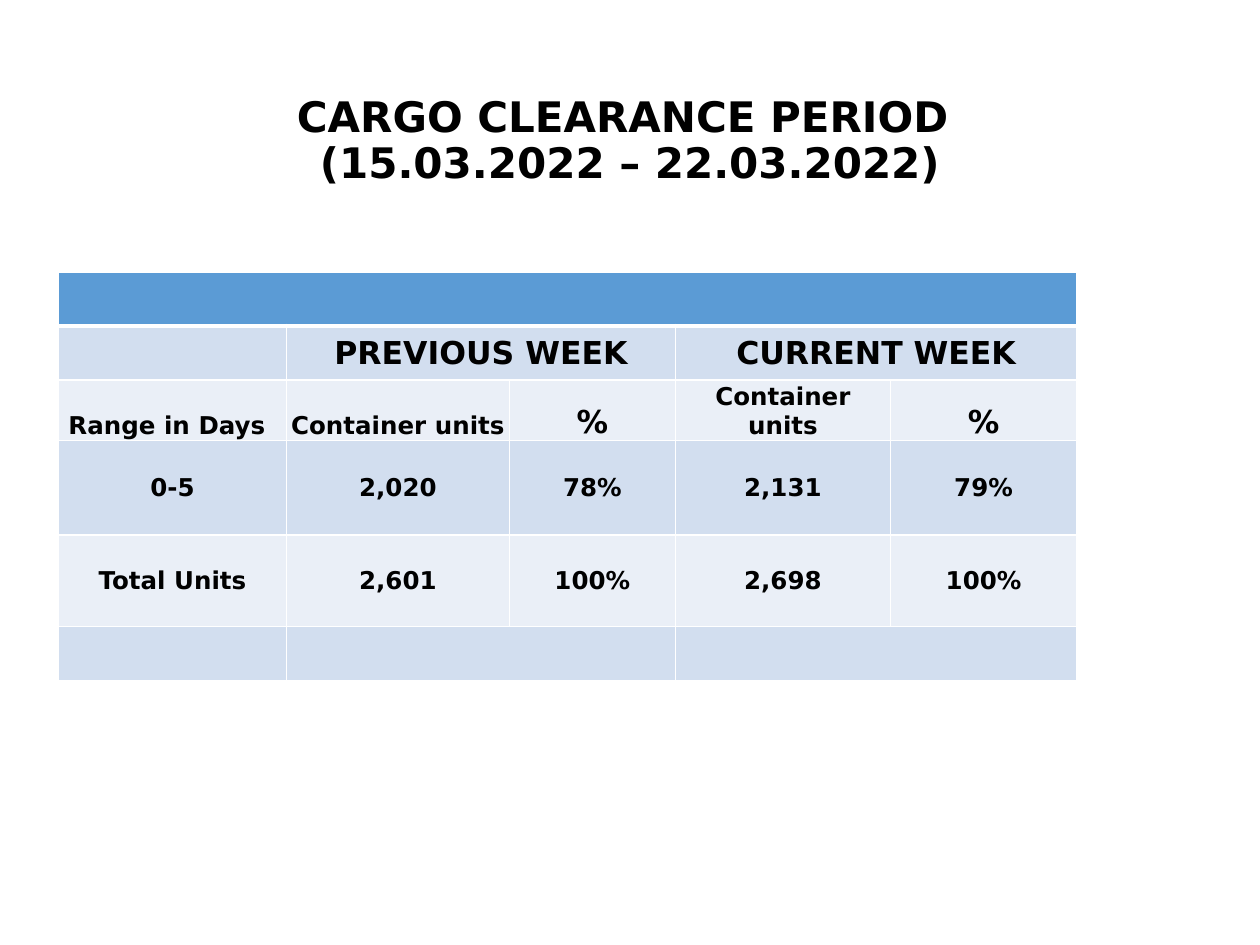
import pptx
import pptx.dml.color
import pptx.enum.text
import pptx.oxml
import pptx.oxml.ns
import pptx.util
from pptx.util import Cm

ALIGN = pptx.enum.text.PP_ALIGN
ANCHOR = pptx.enum.text.MSO_ANCHOR
FONT = "DejaVu Sans"
HEADER_FILL = "5B9BD5"
BAND_FILLS = ("EAEFF7", "D2DEEF")
COLUMN_WIDTHS = (4.6, 4.5, 3.35, 4.34, 3.76)
ROW_HEIGHTS = (1.09, 1.09, 1.2, 1.9, 1.85, 1.09)
MERGES = ((0, 0, 4), (1, 1, 2), (1, 3, 4), (5, 1, 2), (5, 3, 4))
ROWS = (
    ("", "", "", "", ""),
    ("", "PREVIOUS WEEK", "", "CURRENT WEEK", ""),
    ("Range in Days", "Container units", "%", "Container units", "%"),
    ("0-5", "2,020", "78%", "2,131", "79%"),
    ("Total Units", "2,601", "100%", "2,698", "100%"),
    ("", "", "", "", ""),
)


def color(value):
    """Turn a hex string into a colour."""
    return pptx.dml.color.RGBColor.from_string(value)


def write_text(frame, text, size=14, align=ALIGN.CENTER, spacing=1.0):
    """Write one bold paragraph into a text frame."""
    paragraph = frame.paragraphs[0]
    paragraph.text = text
    paragraph.alignment = align
    paragraph.line_spacing = spacing
    for run in paragraph.runs:
        run.font.name = FONT
        run.font.size = pptx.util.Pt(size)
        run.font.bold = True
        run.font.color.rgb = color("000000")


def style_cell(cell, fill, top=1, bottom=1):
    """Give a cell white borders and a solid fill."""
    properties = cell._tc.get_or_add_tcPr()
    for side, width in (("L", 1), ("R", 1), ("T", top), ("B", bottom)):
        properties.append(pptx.oxml.parse_xml(
            f'<a:ln{side} {pptx.oxml.ns.nsdecls("a")} w="{pptx.util.Pt(width)}">'
            f'<a:solidFill><a:srgbClr val="FFFFFF"/></a:solidFill></a:ln{side}>'
        ))
    cell.fill.solid()
    cell.fill.fore_color.rgb = color(fill)


def write_cell(cell, text, row):
    """Place the text of one table cell."""
    is_heading = row == 2
    is_row_heading = text == "Range in Days"
    cell.margin_left = Cm(0.2 if is_row_heading else 0.03)
    cell.margin_right = cell.margin_top = Cm(0.03)
    cell.margin_bottom = 0
    cell.vertical_anchor = ANCHOR.BOTTOM if is_heading else ANCHOR.MIDDLE
    write_text(cell.text_frame, text, size=18 if row == 1 or text == "%" else 14,
               align=ALIGN.LEFT if is_row_heading else ALIGN.CENTER)


def add_title(slide, left, top, width, height):
    """Add the centred two-line title."""
    shape = slide.shapes.add_textbox(left, top, width, height)
    frame = shape.text_frame
    frame.word_wrap = True
    frame.vertical_anchor = ANCHOR.MIDDLE
    write_text(frame, "CARGO CLEARANCE PERIOD \v(15.03.2022 – 22.03.2022)",
               size=24, spacing=0.9)


def add_clearance_table(slide, left, top, width, height):
    """Add the table of container units by clearance period."""
    table = slide.shapes.add_table(
        len(ROWS), len(COLUMN_WIDTHS), left, top, width, height).table
    for column, share in zip(table.columns, COLUMN_WIDTHS):
        column.width = int(width * share / sum(COLUMN_WIDTHS))
    for table_row, share in zip(table.rows, ROW_HEIGHTS):
        table_row.height = int(height * share / sum(ROW_HEIGHTS))
    for row, texts in enumerate(ROWS):
        for column, text in enumerate(texts):
            cell = table.cell(row, column)
            style_cell(cell, BAND_FILLS[row % 2] if row else HEADER_FILL,
                       top=3 if row == 1 else 1, bottom=3 if row == 0 else 1)
            if text:
                write_cell(cell, text, row)
    for row, first, last in MERGES:
        table.cell(row, first).merge(table.cell(row, last))


def main():
    """Build and save the presentation."""
    presentation = pptx.Presentation()
    presentation.slide_width = Cm(25.4)
    presentation.slide_height = Cm(19.05)
    slide = presentation.slides.add_slide(presentation.slide_layouts[6])
    add_title(slide, Cm(1.75), Cm(1.02), Cm(21.9), Cm(3.68))
    add_clearance_table(slide, Cm(1.18), Cm(5.48), Cm(20.53), Cm(8.23))
    presentation.save("out.pptx")


if __name__ == "__main__":
    main()
